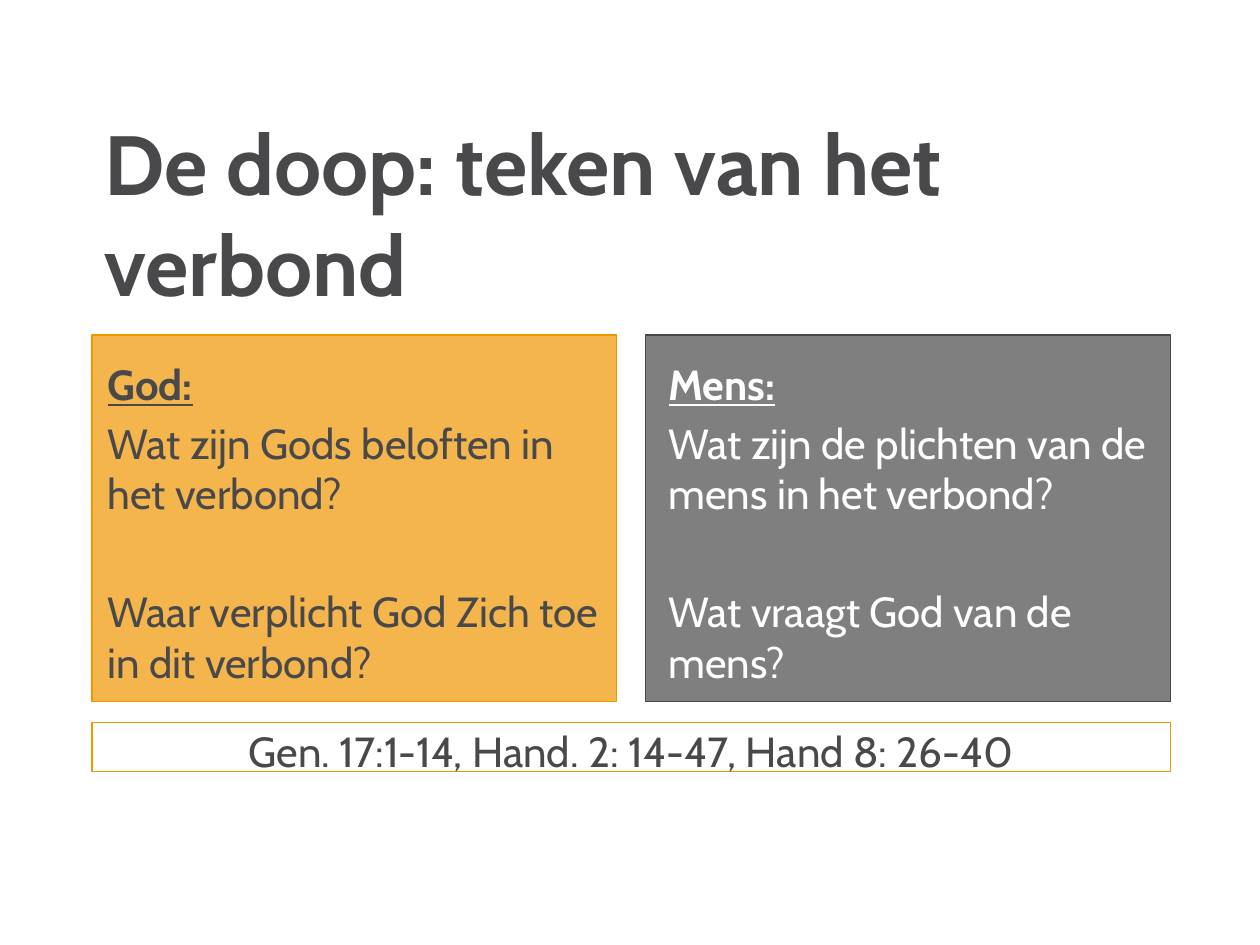
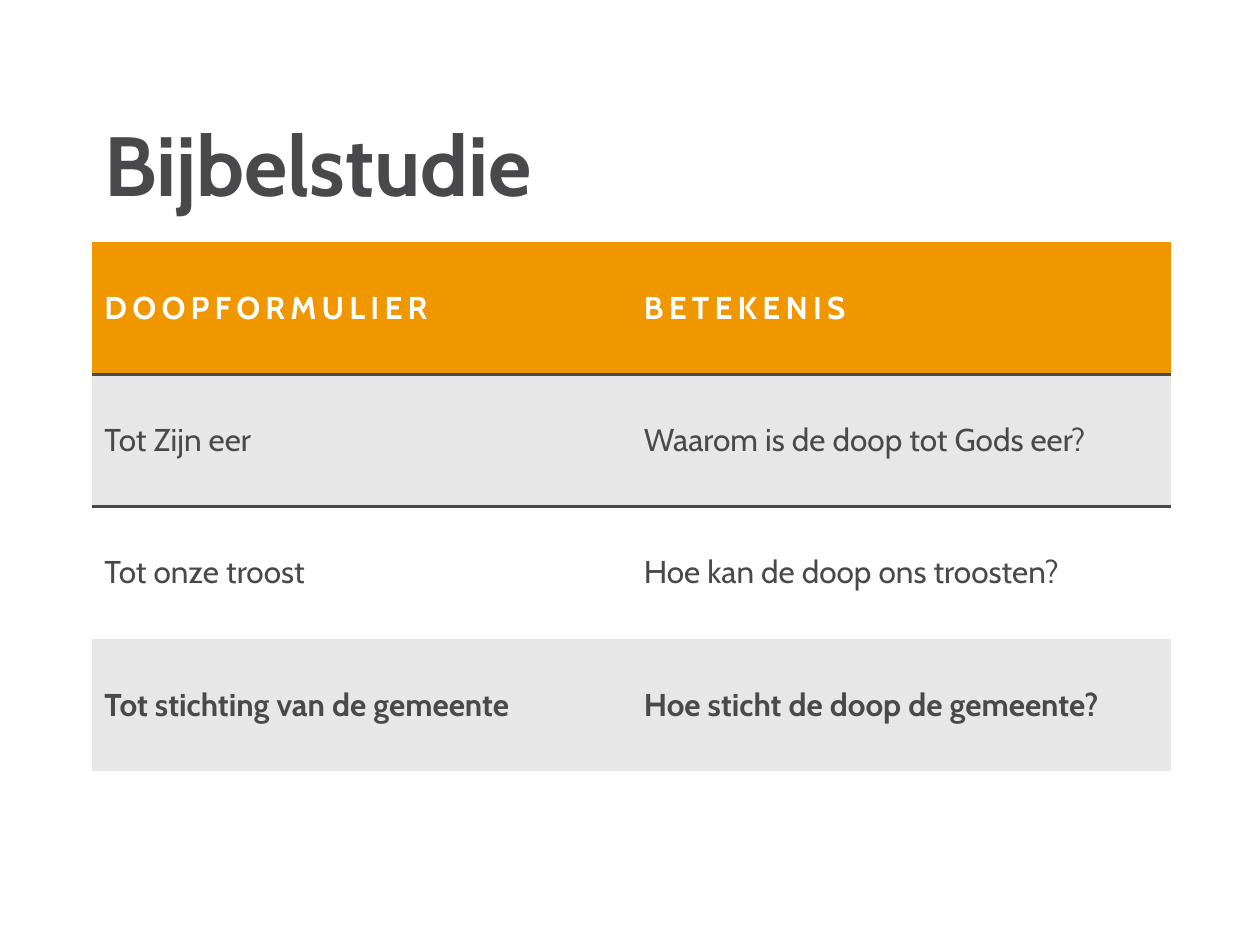
from dataclasses import dataclass

from lxml.etree import SubElement
from pptx import Presentation
from pptx.dml.color import RGBColor
from pptx.enum.shapes import MSO_SHAPE
from pptx.enum.text import MSO_ANCHOR, PP_ALIGN
from pptx.oxml.ns import qn
from pptx.util import Pt


@dataclass(frozen=True)
class Theme:
    font: str = "Cabin"
    ink: str = "49494B"
    accent: str = "F09700"
    band: str = "E7E7E7"
    paper: str = "FFFFFF"
    title_size: float = 48
    body_size: float = 24
    table_size: float = 18
    body_gap: float = 4.8
    question_gap: float = 38.6
    rule_width: float = 2.25


@dataclass(frozen=True)
class Box:
    left: float
    top: float
    width: float
    height: float

    def lengths(self):
        return Pt(self.left), Pt(self.top), Pt(self.width), Pt(self.height)


THEME = Theme()
MARGIN = 52.5
CONTENT_WIDTH = 616.5
TITLE_TOP = 60.5
PANEL_GAP = 16.5

HEADINGS = ("DOOPFORMULIER", "BETEKENIS")
STUDY_ROWS = (
    ("Tot Zijn eer", "Waarom is de doop tot Gods eer?"),
    ("Tot onze troost", "Hoe kan de doop ons troosten?"),
    ("Tot stichting van de gemeente", "Hoe sticht de doop de gemeente?"),
)


def rgb(color):
    return RGBColor.from_string(color)


def content_box(top, height):
    return Box(MARGIN, top, CONTENT_WIDTH, height)


def write(paragraph, text, size, color, **formats):
    run = paragraph.add_run()
    run.text = text
    formats = {"name": THEME.font, "size": Pt(size), "bold": False, **formats}
    for attribute, value in formats.items():
        setattr(run.font, attribute, value)
    run.font.color.rgb = rgb(color)
    return run


def add_title(slide, box, text):
    frame = slide.shapes.add_textbox(*box.lengths()).text_frame
    frame.word_wrap = True
    write(frame.paragraphs[0], text, THEME.title_size, THEME.ink, bold=True)


def add_outlined_box(slide, box, line_color, left_inset=7.2):
    """Add an unfilled rectangle whose text sits just below the middle."""
    shape = slide.shapes.add_shape(MSO_SHAPE.RECTANGLE, *box.lengths())
    shape.shadow.inherit = False
    shape.fill.background()
    shape.line.color.rgb = rgb(line_color)
    shape.line.width = Pt(0.75)
    formats = {
        "word_wrap": True,
        "vertical_anchor": MSO_ANCHOR.MIDDLE,
        "margin_left": Pt(left_inset),
        "margin_top": Pt(3.6 + THEME.body_gap),
    }
    for attribute, value in formats.items():
        setattr(shape.text_frame, attribute, value)
    return shape


def add_panel(slide, box, color, text_color, left_inset, heading, questions):
    panel = add_outlined_box(slide, box, color, left_inset)
    panel.fill.solid()
    panel.fill.fore_color.rgb = rgb(color)
    fill_color = panel.fill._xPr.find(qn("a:solidFill"))[0]
    SubElement(fill_color, qn("a:alpha"), val="70000")

    frame = panel.text_frame
    frame.paragraphs[0].alignment = PP_ALIGN.LEFT
    write(frame.paragraphs[0], heading, THEME.body_size, text_color,
          bold=True, underline=True)
    for question, gap in zip(questions, (THEME.body_gap, THEME.question_gap)):
        paragraph = frame.add_paragraph()
        paragraph.alignment = PP_ALIGN.LEFT
        paragraph.space_before = Pt(gap)
        write(paragraph, question, THEME.body_size, text_color)


def add_references(slide, box, text):
    paragraph = add_outlined_box(slide, box, THEME.accent).text_frame.paragraphs[0]
    paragraph.alignment = PP_ALIGN.CENTER
    write(paragraph, text, THEME.body_size, THEME.ink)


def set_border(cell, side, color=None):
    """Draw one side of a cell; without a colour the side stays empty."""
    border = SubElement(cell._tc.get_or_add_tcPr(), qn(f"a:{side}"),
                        w=str(Pt(THEME.rule_width)))
    if color:
        fill = SubElement(border, qn("a:solidFill"))
        SubElement(fill, qn("a:srgbClr"), val=color)
    else:
        SubElement(border, qn("a:noFill"))


def add_study_table(slide, box):
    rows = (HEADINGS, *STUDY_ROWS)
    table = slide.shapes.add_table(len(rows), len(HEADINGS), *box.lengths()).table
    last = len(rows) - 1
    ruled_below = (0, 1)
    for row_index, row in enumerate(rows):
        is_header = row_index == 0
        fill = THEME.accent if is_header else THEME.band if row_index % 2 else THEME.paper
        rules = {
            "lnL": None,
            "lnR": None,
            "lnT": THEME.ink if row_index - 1 in ruled_below else None,
            "lnB": THEME.ink if row_index in ruled_below else None,
        }
        for column_index, text in enumerate(row):
            cell = table.cell(row_index, column_index)
            cell.vertical_anchor = MSO_ANCHOR.MIDDLE
            for side, color in rules.items():
                set_border(cell, side, color)
            cell.fill.solid()
            cell.fill.fore_color.rgb = rgb(fill)
            run = write(cell.text_frame.paragraphs[0], text, THEME.table_size,
                        THEME.paper if is_header else THEME.ink,
                        bold=row_index in (0, last))
            if is_header:
                run.font._element.set("spc", "300")


def build_covenant_slide(slide):
    panel_width = (CONTENT_WIDTH - PANEL_GAP) / 2
    god_box = Box(MARGIN, 191.5, panel_width, 209.5)
    mens_box = Box(MARGIN + panel_width + PANEL_GAP, god_box.top,
                   panel_width, god_box.height)
    add_panel(slide, god_box, THEME.accent, THEME.ink, 9, "God:",
              ("Wat zijn Gods beloften in het verbond?",
               "Waar verplicht God Zich toe in dit verbond?"))
    add_title(slide, content_box(TITLE_TOP, 119), "De doop: teken van het verbond")
    add_panel(slide, mens_box, THEME.ink, THEME.paper, 13, "Mens:",
              ("Wat zijn de plichten van de mens in het verbond?",
               "Wat vraagt God van de mens?"))
    add_references(slide, content_box(412.75, 28),
                   "Gen. 17:1-14, Hand. 2: 14-47, Hand 8: 26-40")


def build_study_slide(slide):
    add_title(slide, content_box(TITLE_TOP, 65.5), "Bijbelstudie")
    add_study_table(slide, content_box(138.25, 302.5))


def main():
    presentation = Presentation()
    presentation.slide_width = Pt(720)
    presentation.slide_height = Pt(540)
    blank = presentation.slide_layouts[6]
    for build in (build_covenant_slide, build_study_slide):
        build(presentation.slides.add_slide(blank))
    presentation.save("out.pptx")


if __name__ == "__main__":
    main()
